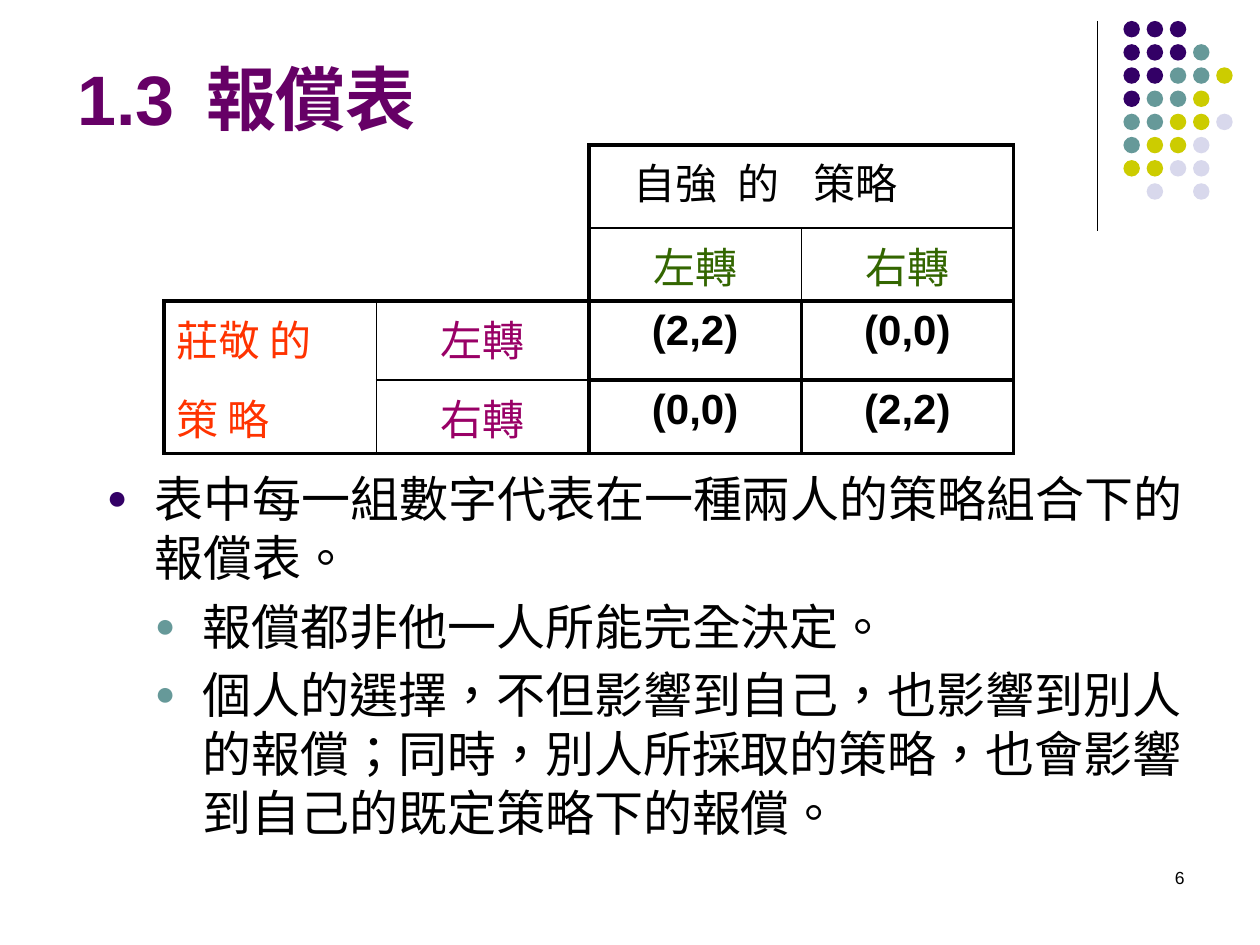
from dataclasses import dataclass

from lxml.etree import SubElement
from pptx import Presentation
from pptx.dml.color import RGBColor
from pptx.enum.lang import MSO_LANGUAGE_ID
from pptx.enum.shapes import MSO_CONNECTOR, MSO_SHAPE
from pptx.enum.text import MSO_ANCHOR, PP_ALIGN
from pptx.oxml.ns import qn
from pptx.util import Pt

COLORS = {
    "black": "000000", "title": "660066", "purple": "330066", "teal": "669999",
    "olive": "CCCC00", "lavender": "D8D8EC", "green": "336600",
    "orange": "FF3300", "plum": "990066",
}
LATIN = "Arial"
CHINESE = "Noto Sans CJK TC"
NO_GRID_STYLE = "{2D5ABB26-0587-4C30-8999-92F81FD0307C}"

DOT_COLORS = {"P": "purple", "T": "teal", "Y": "olive", "L": "lavender"}
DOT_ROWS = ["PPP", "PPPT", "PPTTY", "PTTY", "TTYYL", "TYYL", "YYLL", " L L"]
DOT_LEFT, DOT_TOP, DOT_PITCH, DOT_SIZE = 642, 12, 13.25, 9.4

COLUMN_WIDTHS = [121.5, 121.5, 121.3, 121.3]
ROW_HEIGHTS = [47.5, 41.8, 45.2, 42]
THICK, THIN = 2.25, 1
HORIZONTAL_BORDERS = [
    (0, 0, THICK, THICK),
    (0, 0, THIN, THIN),
    (THICK,) * 4,
    (0, THIN, THICK, THICK),
    (THICK,) * 4,
]
VERTICAL_BORDERS = [
    (0, 0, THICK, 0, THICK),
    (0, 0, THICK, THIN, THICK),
    (THICK, THIN, THICK, THICK, THICK),
    (THICK, THIN, THICK, THICK, THICK),
]


@dataclass
class TextStyle:
    size: float
    color: str = "black"
    font: str = LATIN
    bold: bool = False


@dataclass
class Entry:
    row: int
    column: int
    text: str
    color: str = "black"
    align: PP_ALIGN = PP_ALIGN.CENTER
    bold: bool = False


@dataclass
class Bullet:
    text: str
    level: int
    color: str


ENTRIES = [
    Entry(0, 2, "自強 的 ", align=PP_ALIGN.RIGHT),
    Entry(0, 3, "策略", align=PP_ALIGN.LEFT),
    Entry(1, 2, "左轉", "green"),
    Entry(1, 3, "右轉", "green"),
    Entry(2, 0, "莊敬 的", "orange", PP_ALIGN.LEFT),
    Entry(2, 1, "左轉", "plum"),
    Entry(2, 2, "(2,2)", bold=True),
    Entry(2, 3, "(0,0)", bold=True),
    Entry(3, 0, "策 略", "orange", PP_ALIGN.LEFT),
    Entry(3, 1, "右轉", "plum"),
    Entry(3, 2, "(0,0)", bold=True),
    Entry(3, 3, "(2,2)", bold=True),
]
BULLETS = [
    Bullet("表中每一組數字代表在一種兩人的策略組合下的報償表。", 0, "purple"),
    Bullet("報償都非他一人所能完全決定。", 1, "teal"),
    Bullet("個人的選擇，不但影響到自己，也影響到別人的報償；同時，"
           "別人所採取的策略，也會影響到自己的既定策略下的報償。", 1, "teal"),
]


def rgb(name: str) -> RGBColor:
    return RGBColor.from_string(COLORS[name])


def format_run(run, style: TextStyle) -> None:
    run.font.size = Pt(style.size)
    run.font.bold = style.bold
    run.font.name = style.font
    run.font.color.rgb = rgb(style.color)
    run.font.language_id = MSO_LANGUAGE_ID.TRADITIONAL_CHINESE
    SubElement(run.font._element, qn("a:ea"), typeface=CHINESE)


def write_spaced(paragraph, words: list[str], style: TextStyle, extra_gap: float) -> None:
    first, second = words
    for text in (first, " ", second):
        run = paragraph.add_run()
        run.text = text
        format_run(run, style)
        if text == " ":
            run.font._element.set("spc", str(round(extra_gap * 100)))


def add_text_box(slide, left: float, top: float, width: float, height: float):
    box = slide.shapes.add_textbox(Pt(left), Pt(top), Pt(width), Pt(height))
    box.text_frame.word_wrap = True
    return box.text_frame


def add_dots(slide) -> None:
    group = slide.shapes.add_group_shape()
    for row, codes in enumerate(DOT_ROWS):
        for column, code in enumerate(codes):
            if code == " ":
                continue
            dot = group.shapes.add_shape(
                MSO_SHAPE.OVAL, Pt(DOT_LEFT + column * DOT_PITCH),
                Pt(DOT_TOP + row * DOT_PITCH), Pt(DOT_SIZE), Pt(DOT_SIZE))
            dot.shadow.inherit = False
            dot.fill.solid()
            dot.fill.fore_color.rgb = rgb(DOT_COLORS[code])
            dot.line.fill.background()


def add_divider(slide) -> None:
    line = slide.shapes.add_connector(
        MSO_CONNECTOR.STRAIGHT, Pt(627), Pt(12), Pt(627), Pt(132))
    line.line.color.rgb = rgb("black")
    line.line.width = Pt(0.75)
    SubElement(line._element.spPr, qn("a:effectLst"))


def set_borders(cell, row: int, column: int) -> None:
    widths = {
        "a:lnL": VERTICAL_BORDERS[row][column],
        "a:lnR": VERTICAL_BORDERS[row][column + 1],
        "a:lnT": HORIZONTAL_BORDERS[row][column],
        "a:lnB": HORIZONTAL_BORDERS[row + 1][column],
    }
    properties = cell._tc.get_or_add_tcPr()
    for tag, width in widths.items():
        border = SubElement(properties, qn(tag), w=str(Pt(width)))
        if width:
            fill = SubElement(border, qn("a:solidFill"))
            SubElement(fill, qn("a:srgbClr"), val=COLORS["black"])
        else:
            SubElement(border, qn("a:noFill"))
    cell.fill.background()


def add_payoff_table(slide) -> None:
    frame = slide.shapes.add_table(
        len(ROW_HEIGHTS), len(COLUMN_WIDTHS), Pt(93.6), Pt(82.8),
        Pt(sum(COLUMN_WIDTHS)), Pt(sum(ROW_HEIGHTS)))
    table = frame.table
    table.first_row = table.horz_banding = False
    table._tbl.tblPr.find(qn("a:tableStyleId")).text = NO_GRID_STYLE
    for column, width in enumerate(COLUMN_WIDTHS):
        table.columns[column].width = Pt(width)
    for row, height in enumerate(ROW_HEIGHTS):
        table.rows[row].height = Pt(height)
        for column in range(len(COLUMN_WIDTHS)):
            set_borders(table.cell(row, column), row, column)
    for entry in ENTRIES:
        paragraph = table.cell(entry.row, entry.column).text_frame.paragraphs[0]
        paragraph.alignment = entry.align
        style = TextStyle(24, entry.color, bold=entry.bold)
        if entry.align == PP_ALIGN.RIGHT:
            write_spaced(paragraph, entry.text.split(" ", 1), style, 6)
        else:
            paragraph.text = entry.text
            format_run(paragraph.runs[0], style)


def add_bullets(slide) -> None:
    text_frame = add_text_box(slide, 54, 264.2, 629, 260.6)
    for index, bullet in enumerate(BULLETS):
        paragraph = text_frame.add_paragraph() if index else text_frame.paragraphs[0]
        paragraph.text = bullet.text
        paragraph.level = bullet.level
        paragraph.space_before = Pt(5.6 if index else 0)
        format_run(paragraph.runs[0], TextStyle(28, font=CHINESE))
        properties = paragraph._p.get_or_add_pPr()
        properties.set("marL", str(Pt(27.4 * (bullet.level + 1))))
        properties.set("indent", str(Pt(-27.4)))
        color = SubElement(properties, qn("a:buClr"))
        SubElement(color, qn("a:srgbClr"), val=COLORS[bullet.color])
        SubElement(properties, qn("a:buSzPct"), val="70000")
        SubElement(properties, qn("a:buFont"), typeface=LATIN)
        SubElement(properties, qn("a:buChar"), char="●")


def main() -> None:
    presentation = Presentation()
    presentation.slide_width, presentation.slide_height = Pt(720), Pt(540)
    slide = presentation.slides.add_slide(presentation.slide_layouts[6])
    add_divider(slide)
    add_dots(slide)
    number = add_text_box(slide, 516, 492, 168, 36).paragraphs[0]
    number.text = "6"
    number.alignment = PP_ALIGN.RIGHT
    format_run(number.runs[0], TextStyle(10))
    title = add_text_box(slide, 37, 20.5, 590, 62.5)
    title.vertical_anchor = MSO_ANCHOR.BOTTOM
    write_spaced(title.paragraphs[0], ["1.3", "報償表"], TextStyle(40, "title", bold=True), 7)
    add_bullets(slide)
    add_payoff_table(slide)
    presentation.save("out.pptx")


if __name__ == "__main__":
    main()
